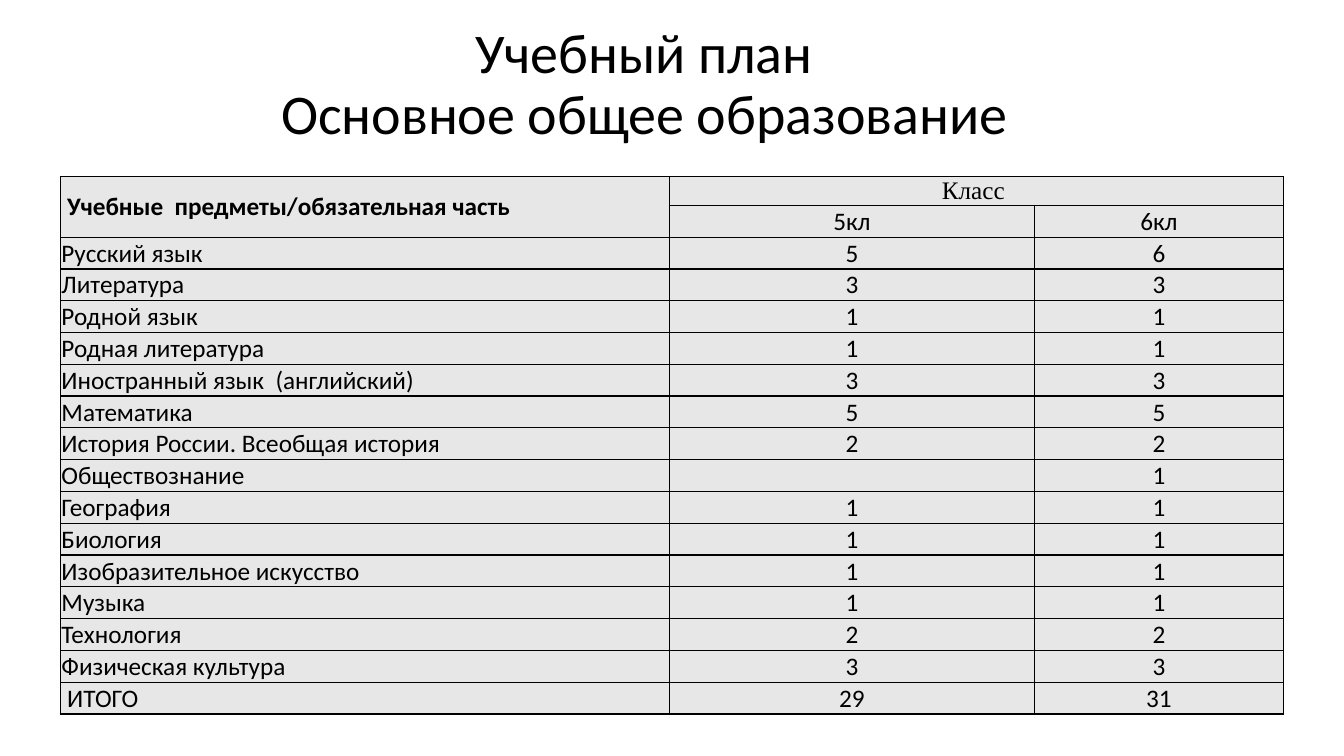
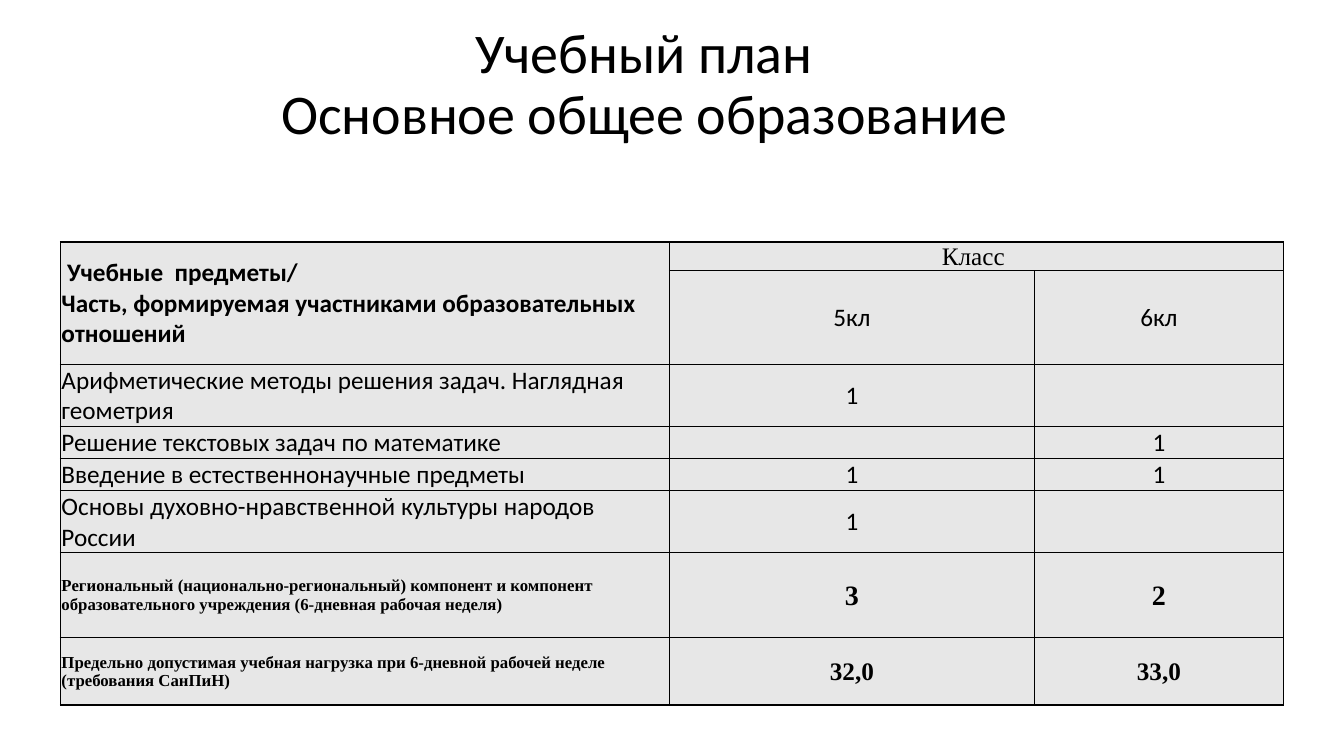
from dataclasses import dataclass

import pptx
import pptx.dml.color
import pptx.enum.text
import pptx.oxml
import pptx.oxml.ns
import pptx.presentation
import pptx.table
import pptx.util
from pptx.util import Inches

COLORS = {"text": "000000", "cell": "E7E7E7", "border": "000000"}
SANS, SERIF = "Calibri", "Times New Roman"
TITLE = "Учебный план\vОсновное общее образование"
COL_WIDTHS = (6.04, 3.62, 2.47)
ROW_H = 0.28
ALIGN = pptx.enum.text.PP_ALIGN
ANCHOR = pptx.enum.text.MSO_ANCHOR


@dataclass(frozen=True)
class Style:
    font: str = SANS
    size: int = 18
    bold: bool = False


PLAIN = Style()
HEADING = Style(bold=True)
GROUP = Style(font=SERIF)
NOTE = Style(SERIF, 12, True)


@dataclass(frozen=True)
class Row:
    subject: str
    grade5: str
    grade6: str
    height: float = ROW_H
    label_style: Style = PLAIN
    value_style: Style = PLAIN


@dataclass(frozen=True)
class Plan:
    heading: str
    top: float
    height: float
    rows: tuple[Row, ...]


PLANS = (
    Plan(" Учебные  предметы/обязательная часть", 1.75, 5.26, (
        Row("Русский язык", "5", "6"),
        Row("Литература", "3", "3"),
        Row("Родной язык", "1", "1"),
        Row("Родная литература", "1", "1"),
        Row("Иностранный язык  (английский)", "3", "3"),
        Row("Математика", "5", "5"),
        Row("История России. Всеобщая история", "2", "2"),
        Row("Обществознание", "", "1"),
        Row("География", "1", "1"),
        Row("Биология", "1", "1"),
        Row("Изобразительное искусство", "1", "1"),
        Row("Музыка", "1", "1"),
        Row("Технология", "2", "2"),
        Row("Физическая культура", "3", "3"),
        Row(" ИТОГО", "29", "31", 0.29),
    )),
    Plan(" Учебные  предметы/\nЧасть, формируемая участниками образовательных отношений",
         2.4, 4.26, (
        Row("Арифметические методы решения задач. Наглядная геометрия", "1", "", 0.31),
        Row("Решение текстовых задач по математике", "", "1"),
        Row("Введение в естественнонаучные предметы", "1", "1"),
        Row("Основы духовно-нравственной культуры народов России", "1", ""),
        Row("Региональный (национально-региональный) компонент и компонент "
            "образовательного учреждения (6-дневная рабочая неделя)",
            "3", "2", 0.84, NOTE, Style(SERIF, 20, True)),
        Row("Предельно допустимая учебная нагрузка при 6-дневной рабочей неделе "
            "(требования СанПиН)",
            "32,0", "33,0", 0.67, NOTE, Style(SERIF, 18, True)),
    )),
)


def format_text(tf, style: Style, align) -> None:
    for p in tf.paragraphs:
        p.alignment = align
        for r in p.runs:
            r.font.name = style.font
            r.font.size = pptx.util.Pt(style.size)
            r.font.bold = style.bold
            r.font.color.rgb = pptx.dml.color.RGBColor.from_string(COLORS["text"])


def add_title(slide) -> None:
    sp = slide.shapes.title
    sp.left, sp.top, sp.width, sp.height = map(Inches, (1.39, 0.3, 10, 1.2))
    tf = sp.text_frame
    tf.text = TITLE
    tf.word_wrap = True
    tf.auto_size = pptx.enum.text.MSO_AUTO_SIZE.NONE
    tf.vertical_anchor = ANCHOR.BOTTOM
    format_text(tf, Style(size=40), ALIGN.CENTER)
    p = tf.paragraphs[0]
    p.line_spacing = 0.9
    # The first line sits slightly left of centre
    pPr = p._p.get_or_add_pPr()
    pPr.set("marL", "0")
    pPr.set("indent", str(Inches(-0.38)))


def format_cell(cell) -> None:
    cell.margin_left = cell.margin_right = cell.margin_top = Inches(0.01)
    cell.margin_bottom = 0
    cell.vertical_anchor = ANCHOR.MIDDLE
    tcPr = cell._tc.get_or_add_tcPr()
    for side in ("lnL", "lnR", "lnT", "lnB"):
        tcPr.append(pptx.oxml.parse_xml(
            f'<a:{side} {pptx.oxml.ns.nsdecls("a")} w="{pptx.util.Pt(1)}"><a:solidFill>'
            f'<a:srgbClr val="{COLORS["border"]}"/></a:solidFill></a:{side}>'))
    cell.fill.solid()
    cell.fill.fore_color.rgb = pptx.dml.color.RGBColor.from_string(COLORS["cell"])


def set_cell(table: pptx.table.Table, row: int, col: int, text: str, style: Style) -> None:
    tf = table.cell(row, col).text_frame
    tf.text = text
    format_text(tf, style, ALIGN.CENTER if col else ALIGN.LEFT)


def add_plan_table(slide, plan: Plan) -> None:
    frame = slide.shapes.add_table(
        len(plan.rows) + 2, len(COL_WIDTHS), Inches(0.6), Inches(plan.top),
        Inches(sum(COL_WIDTHS)), Inches(plan.height))
    table = frame.table
    table.first_row = table.horz_banding = False
    for column, width in zip(table.columns, COL_WIDTHS):
        column.width = Inches(width)
    heights = [ROW_H, ROW_H] + [row.height for row in plan.rows]
    for table_row, height in zip(table.rows, heights):
        table_row.height = Inches(height)
    frame.height = Inches(plan.height)
    for cell in table.iter_cells():
        format_cell(cell)

    # Two-level heading
    table.cell(0, 0).merge(table.cell(1, 0))
    table.cell(0, 1).merge(table.cell(0, 2))
    set_cell(table, 0, 0, plan.heading, HEADING)
    set_cell(table, 0, 1, "Класс ", GROUP)
    set_cell(table, 1, 1, "5кл", PLAIN)
    set_cell(table, 1, 2, "6кл", PLAIN)

    # Subjects and weekly hours
    for i, row in enumerate(plan.rows, start=2):
        set_cell(table, i, 0, row.subject, row.label_style)
        set_cell(table, i, 1, row.grade5, row.value_style)
        set_cell(table, i, 2, row.grade6, row.value_style)


def add_plan_slide(prs: pptx.presentation.Presentation, plan: Plan) -> None:
    slide = prs.slides.add_slide(prs.slide_layouts[5])
    add_title(slide)
    add_plan_table(slide, plan)


def main() -> None:
    prs = pptx.Presentation()
    prs.slide_width, prs.slide_height = Inches(13.33), Inches(7.5)
    for plan in PLANS:
        add_plan_slide(prs, plan)
    prs.save("out.pptx")


if __name__ == "__main__":
    main()
